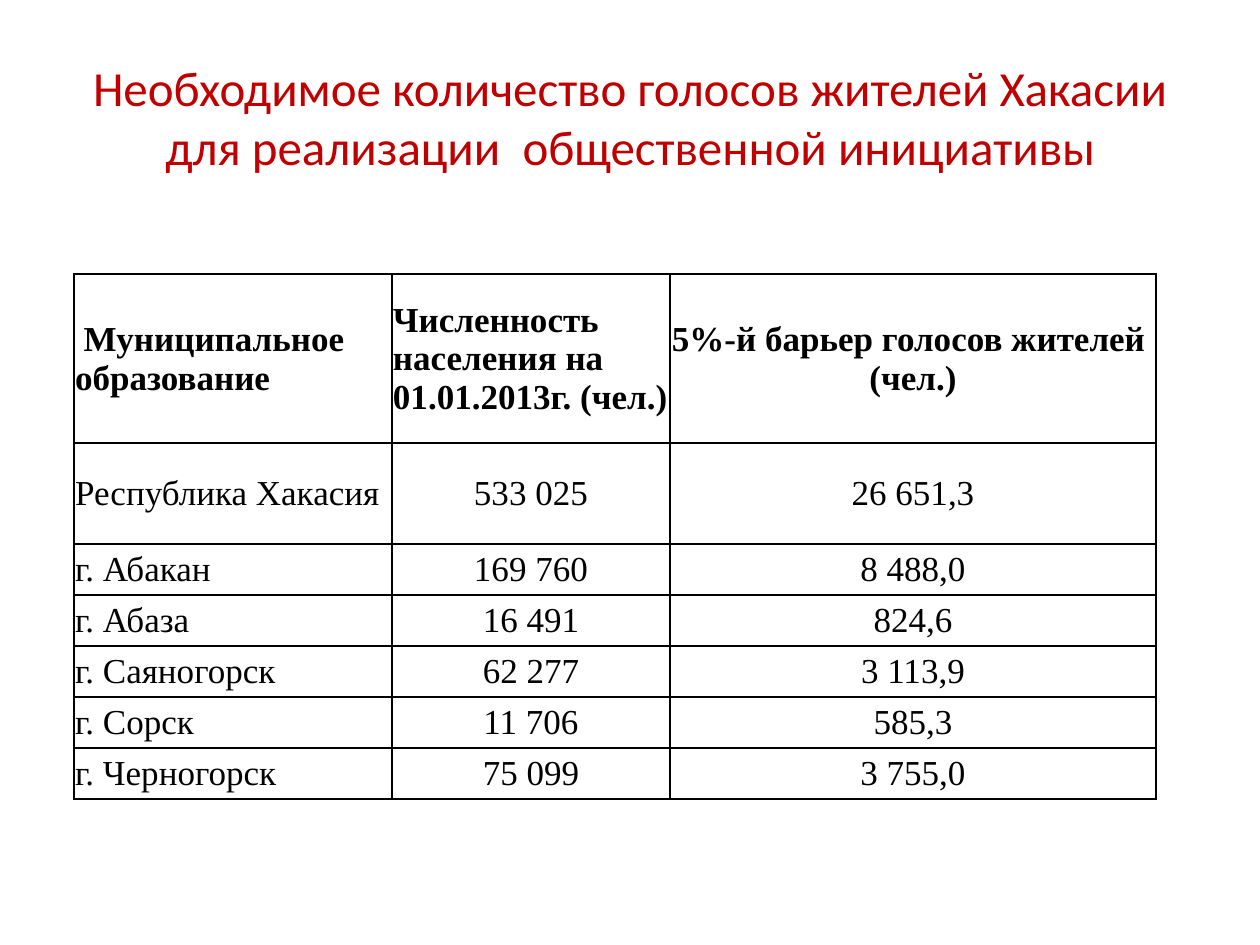
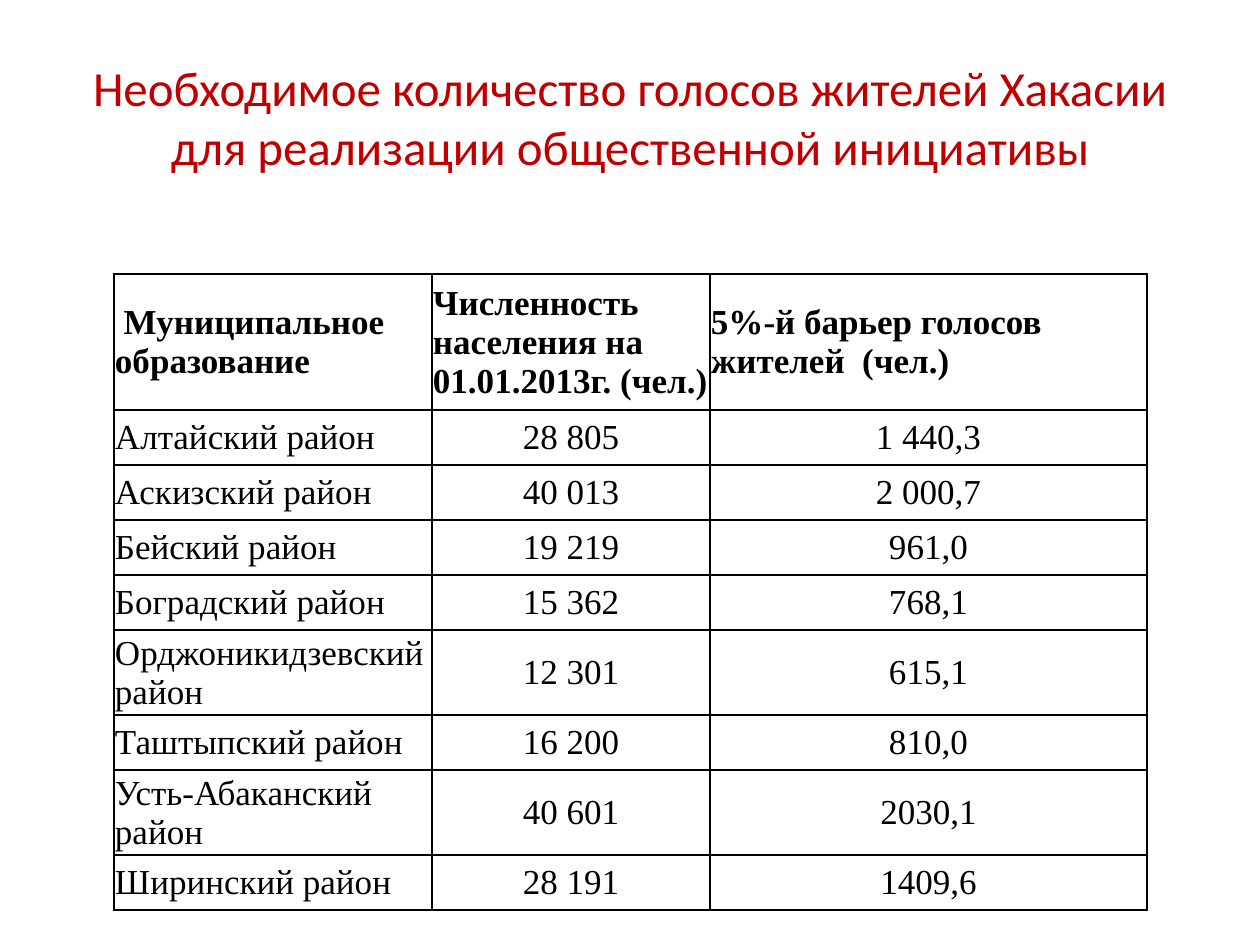
from dataclasses import dataclass
from typing import Any

import lxml.etree
import pptx
import pptx.dml.color
import pptx.enum.text
import pptx.oxml.ns
import pptx.util

PX_PER_INCH = 126
RED = pptx.dml.color.RGBColor(0xC0, 0x00, 0x00)
BLACK = pptx.dml.color.RGBColor(0x00, 0x00, 0x00)
LEFT = pptx.enum.text.PP_ALIGN.LEFT
CENTER = pptx.enum.text.PP_ALIGN.CENTER
MIDDLE = pptx.enum.text.MSO_ANCHOR.MIDDLE

TITLE_FONT = {"name": "Calibri", "size": pptx.util.Pt(28), "bold": False}
HEADER_FONT = {"name": "Times New Roman", "size": pptx.util.Pt(20), "bold": True}
BODY_FONT = HEADER_FONT | {"bold": False}
HEADERS = (
    " Муниципальное образование",
    "Численность населения на 01.01.2013г. (чел.)",
    "5%-й барьер голосов жителей  (чел.)",
)
TABLE_TOP = 274


@dataclass(frozen=True)
class VotesSlide:
    title: str
    left: int
    col_widths: tuple[int, ...]
    header_height: int
    barrier_align: Any
    rows: tuple[tuple[int, str, str, str], ...]


SLIDES = (
    VotesSlide(
        "Необходимое количество голосов жителей Хакасии для реализации  общественной инициативы",
        74, (318, 278, 486), 169, CENTER,
        (
            (101, "Республика Хакасия", "533 025", "26 651,3"),
            (51, "г. Абакан", "169 760", "8 488,0"),
            (51, "г. Абаза", "16 491", "824,6"),
            (51, "г. Саяногорск", "62 277", "3 113,9"),
            (51, "г. Сорск", "11 706", "585,3"),
            (51, "г. Черногорск", "75 099", "3 755,0"),
        ),
    ),
    VotesSlide(
        "Необходимое количество голосов жителей Хакасии для реализации общественной инициативы",
        114, (318, 278, 437), 136, LEFT,
        (
            (55, "Алтайский район", "28 805", "1 440,3"),
            (55, "Аскизский район", "40 013", "2 000,7"),
            (55, "Бейский район", "19 219", "961,0"),
            (55, "Боградский район", "15 362", "768,1"),
            (79, "Орджоникидзевский район", "12 301", "615,1"),
            (55, "Таштыпский район", "16 200", "810,0"),
            (82, "Усть-Абаканский район", "40 601", "2030,1"),
            (55, "Ширинский район", "28 191", "1409,6"),
        ),
    ),
)


def px(n: int) -> int:
    return round(n * pptx.util.Inches(1) / PX_PER_INCH)


def set_attrs(target: Any, values: dict[str, Any]) -> None:
    for name, value in values.items():
        setattr(target, name, value)


def write(p: Any, text: str, font: dict[str, Any], color: Any, align: Any) -> None:
    p.alignment = align
    r = p.add_run()
    r.text = text
    set_attrs(r.font, font)
    r.font.color.rgb = color


def add_title(s: Any, text: str) -> None:
    sp = s.shapes.add_textbox(px(63), px(38), px(1134), px(157))
    tf = sp.text_frame
    set_attrs(tf, {"word_wrap": True, "vertical_anchor": MIDDLE})
    write(tf.paragraphs[0], text, TITLE_FONT, RED, CENTER)


def add_borders(cell: Any) -> None:
    qn = pptx.oxml.ns.qn
    tc_pr = cell._tc.get_or_add_tcPr()
    for i, side in enumerate(("lnL", "lnR", "lnT", "lnB")):
        ln = lxml.etree.Element(qn(f"a:{side}"), w=str(pptx.util.Pt(1)))
        fill = lxml.etree.SubElement(ln, qn("a:solidFill"))
        lxml.etree.SubElement(fill, qn("a:srgbClr"), val=str(BLACK))
        tc_pr.insert(i, ln)


def fill_cell(cell: Any, text: str, font: dict[str, Any], align: Any) -> None:
    set_attrs(cell, {
        "margin_left": px(1), "margin_right": px(1), "margin_top": px(1),
        "margin_bottom": 0, "vertical_anchor": MIDDLE,
    })
    write(cell.text_frame.paragraphs[0], text, font, BLACK, align)
    cell.fill.background()
    add_borders(cell)


def add_votes_table(s: Any, votes: VotesSlide) -> None:
    rows = ((votes.header_height, *HEADERS), *votes.rows)
    table = s.shapes.add_table(
        len(rows), len(HEADERS), px(votes.left), px(TABLE_TOP),
        px(sum(votes.col_widths)), px(sum(row[0] for row in rows)),
    ).table
    set_attrs(table, {"first_row": False, "horz_banding": False})
    for column, width in zip(table.columns, votes.col_widths):
        column.width = px(width)
    for i, (height, *texts) in enumerate(rows):
        table.rows[i].height = px(height)
        font = BODY_FONT if i else HEADER_FONT
        aligns = (LEFT, CENTER, CENTER) if i else (LEFT, LEFT, votes.barrier_align)
        for j, (text, align) in enumerate(zip(texts, aligns)):
            fill_cell(table.cell(i, j), text, font, align)


def main() -> None:
    prs = pptx.Presentation()
    set_attrs(prs, {"slide_width": px(1260), "slide_height": px(945)})
    for votes in SLIDES:
        s = prs.slides.add_slide(prs.slide_layouts[6])
        add_title(s, votes.title)
        add_votes_table(s, votes)
    prs.save("out.pptx")


if __name__ == "__main__":
    main()
